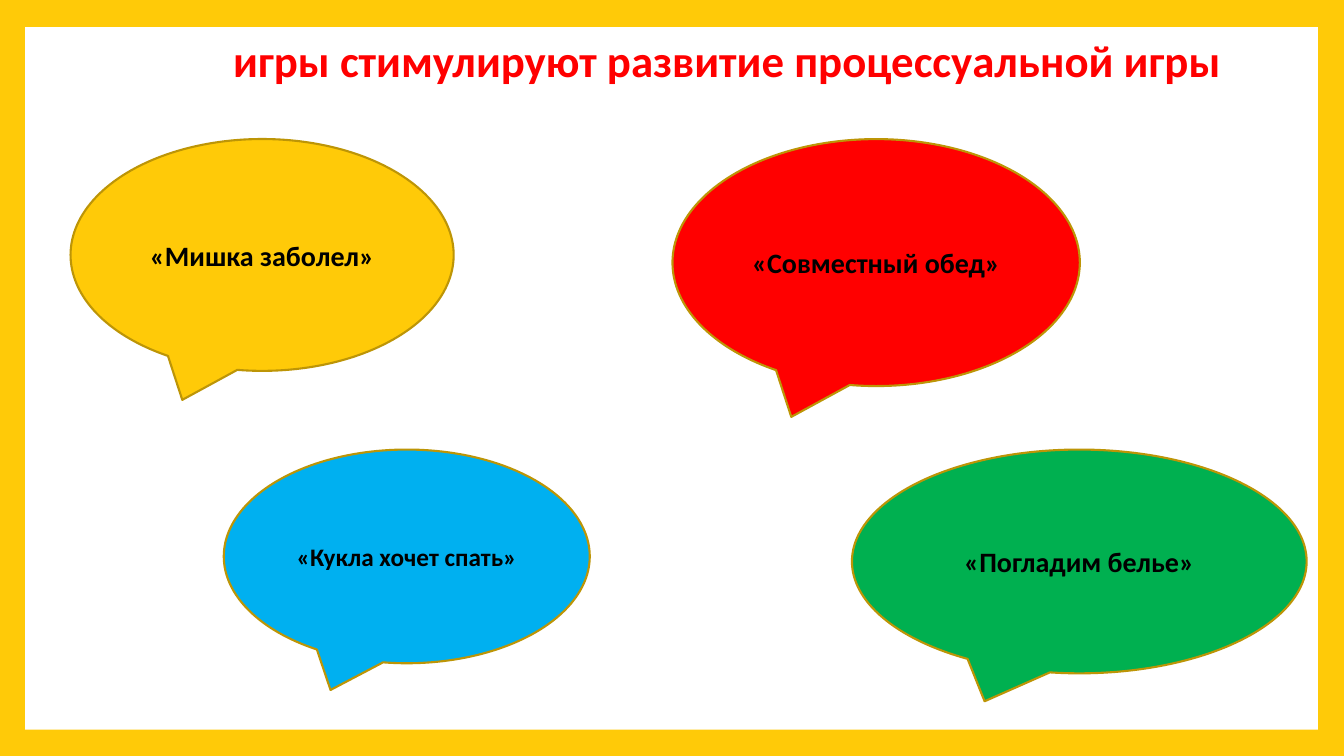
from dataclasses import dataclass

from pptx import Presentation
from pptx import util as u
from pptx.dml.color import RGBColor
from pptx.enum import shapes, text

PX = 9144  # EMU per px, 100 px to the inch


@dataclass(frozen=True)
class Theme:
    font: str = "Calibri"
    yellow: str = "FFCA08"
    white: str = "FFFFFF"
    red: str = "FF0000"
    blue: str = "00B0F0"
    green: str = "00B050"
    black: str = "000000"
    outline: str = "BD9506"
    outline_width: float = 1.5
    title_size: int = 32
    game_size: int = 20
    small_size: int = 18


class GameSlide:
    def __init__(self, prs, theme):
        self.theme = theme
        self.slide = prs.slides.add_slide(prs.slide_layouts[6])

    def background(self, color):
        self.paint(self.slide.background.fill, color)

    def paint(self, fill, color):
        fill.solid()
        fill.fore_color.rgb = RGBColor.from_string(color)

    def label(self, frame, wording, size, color):
        paragraph = frame.paragraphs[0]
        paragraph.alignment = text.PP_ALIGN.CENTER
        run = paragraph.add_run()
        run.text = wording
        run.font.name = self.theme.font
        run.font.size = u.Pt(size)
        run.font.bold = True
        run.font.color.rgb = RGBColor.from_string(color)

    def shape(self, kind, box, color):
        shape = self.slide.shapes.add_shape(kind, *(n * PX for n in box))
        shape.shadow.inherit = False
        self.paint(shape.fill, color)
        return shape

    def panel(self, box, color):
        self.shape(shapes.MSO_SHAPE.RECTANGLE, box, color).line.fill.background()

    def title(self, wording, box):
        heading = self.slide.shapes.add_textbox(*(n * PX for n in box))
        heading.text_frame.word_wrap = False
        heading.text_frame.auto_size = text.MSO_AUTO_SIZE.SHAPE_TO_FIT_TEXT
        self.label(heading.text_frame, wording, self.theme.title_size, self.theme.red)

    def bubble(self, wording, box, color, size):
        bubble = self.shape(shapes.MSO_SHAPE.OVAL_CALLOUT, box, color)
        bubble.line.color.rgb = RGBColor.from_string(self.theme.outline)
        bubble.line.width = u.Pt(self.theme.outline_width)
        bubble.text_frame.word_wrap = True
        bubble.text_frame.vertical_anchor = text.MSO_ANCHOR.MIDDLE
        self.label(bubble.text_frame, wording, size, self.theme.black)


def main():
    prs = Presentation()
    prs.slide_width, prs.slide_height = 1333 * PX, 750 * PX
    theme = Theme()
    page = GameSlide(prs, theme)

    # Yellow frame around a white panel
    page.background(theme.yellow)
    page.panel((25, 27, 1282, 697), theme.white)

    # Heading
    page.title("игры стимулируют развитие процессуальной игры", (204, 28, 1035, 64))

    # Games, in two rows
    upper, lower = 138, 446
    games = [
        ("«Мишка заболел»", (70, upper, 380, 230), theme.yellow, theme.game_size),
        ("«Совместный обед»", (667, upper, 404, 245), theme.red, theme.game_size),
        ("«Кукла хочет спать»", (222, lower, 363, 212), theme.blue, theme.small_size),
        ("«Погладим белье»", (845, lower, 451, 222), theme.green, theme.game_size),
    ]
    for game in games:
        page.bubble(*game)

    prs.save("out.pptx")


if __name__ == "__main__":
    main()
